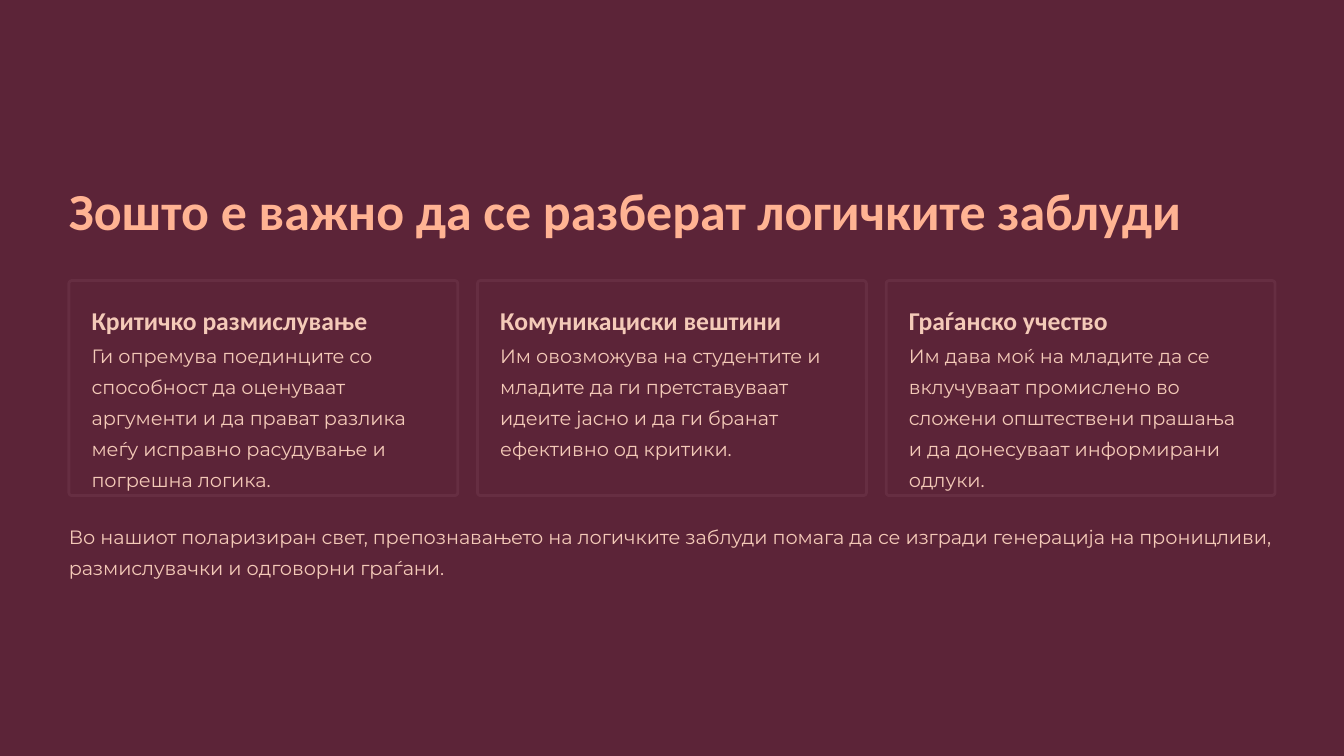
"""Build a slide on why understanding logical fallacies matters."""
from dataclasses import dataclass

from pptx import Presentation
from pptx.dml.color import RGBColor
from pptx.enum.shapes import MSO_SHAPE
from pptx.enum.text import MSO_ANCHOR, MSO_AUTO_SIZE, PP_ALIGN
from pptx.shapes.autoshape import Shape
from pptx.slide import Slide
from pptx.util import Inches, Pt

ROUNDED = MSO_SHAPE.ROUNDED_RECTANGLE
TOP = MSO_ANCHOR.TOP
NO_AUTOFIT = MSO_AUTO_SIZE.NONE
LEFT = PP_ALIGN.LEFT

PLUM = RGBColor(0x5C, 0x24, 0x38)
BORDER = RGBColor(0x66, 0x2E, 0x42)
PEACH = RGBColor(0xFF, 0xB3, 0x93)
BLUSH = RGBColor(0xF4, 0xCA, 0xB8)

HEADING_FONT = "Calibri"
BODY_FONT = "Montserrat"
MARGIN = 0.82
CONTENT_WIDTH = 14.36
CARD_TOP = 3.34
CARD_WIDTH = 4.63
CARD_HEIGHT = 2.56
CARD_PADDING = 0.27
CARD_TEXT_WIDTH = 4.05


@dataclass(frozen=True)
class Benefit:
    """Hold the wording of one card."""

    heading: str
    body: str


TITLE = "Зошто е важно да се разберат логичките заблуди"
BENEFITS = [
    Benefit(
        "Критичко размислување",
        "Ги опремува поединците со способност да оценуваат аргументи и да прават "
        "разлика меѓу исправно расудување и погрешна логика.",
    ),
    Benefit(
        "Комуникациски вештини",
        "Им овозможува на студентите и младите да ги претставуваат идеите јасно "
        "и да ги бранат ефективно од критики.",
    ),
    Benefit(
        "Граѓанско учество",
        "Им дава моќ на младите да се вклучуваат промислено во сложени општествени "
        "прашања и да донесуваат информирани одлуки.",
    ),
]
CARD_PITCH = (CONTENT_WIDTH - CARD_WIDTH) / (len(BENEFITS) - 1)
CONCLUSION = (
    "Во нашиот поларизиран свет, препознавањето на логичките заблуди помага да се "
    "изгради генерација на проницливи, размислувачки и одговорни граѓани."
)


def write_text(
    shape: Shape,
    text: str,
    *,
    font: str = BODY_FONT,
    size: float = 16.5,
    spacing: float = 26.5,
    color: RGBColor = BLUSH,
    bold: bool = False,
    wrap: bool = True,
) -> None:
    """Write one formatted paragraph into a shape without insets."""
    frame = shape.text_frame
    frame.margin_left = frame.margin_right = 0
    frame.margin_top = frame.margin_bottom = 0
    frame.auto_size = NO_AUTOFIT
    frame.vertical_anchor = TOP
    frame.word_wrap = wrap
    frame.text = text
    paragraph = frame.paragraphs[0]
    paragraph.alignment = LEFT
    paragraph.line_spacing = Pt(spacing)
    paragraph.space_before = Pt(0)
    paragraph.font.name = font
    paragraph.font.size = Pt(size)
    paragraph.font.bold = bold
    paragraph.font.color.rgb = color


def add_text_box(
    slide: Slide, left: float, top: float, width: float, height: float
) -> Shape:
    """Add an empty text box measured in inches."""
    return slide.shapes.add_textbox(
        Inches(left), Inches(top), Inches(width), Inches(height)
    )


def add_title(slide: Slide) -> None:
    """Place and format the title placeholder."""
    title = slide.shapes.title
    title.left, title.top = Inches(MARGIN), Inches(2.09)
    title.width, title.height = Inches(CONTENT_WIDTH), Inches(0.78)
    write_text(title, TITLE, font=HEADING_FONT, size=44.5, spacing=56,
               color=PEACH, bold=True)


def add_card(slide: Slide, benefit: Benefit, left: float) -> None:
    """Draw an outlined card with its heading and body."""
    card = slide.shapes.add_shape(
        ROUNDED, Inches(left), Inches(CARD_TOP), Inches(CARD_WIDTH), Inches(CARD_HEIGHT)
    )
    card.adjustments[0] = 0.014
    card.shadow.inherit = False
    card.fill.solid()
    card.fill.fore_color.rgb = PLUM
    card.line.color.rgb = BORDER
    card.line.width = Pt(2.4)

    text_left = left + CARD_PADDING
    heading = add_text_box(slide, text_left, 3.61, CARD_TEXT_WIDTH, 0.39)
    write_text(heading, benefit.heading, font=HEADING_FONT, size=22, spacing=28,
               bold=True, wrap=False)
    body = add_text_box(slide, text_left, 4.01, CARD_TEXT_WIDTH, 1.5)
    write_text(body, benefit.body)


def main() -> None:
    """Build and save the presentation."""
    presentation = Presentation()
    presentation.slide_width = Inches(16)
    presentation.slide_height = Inches(9)
    slide = presentation.slides.add_slide(presentation.slide_layouts[5])
    slide.background.fill.solid()
    slide.background.fill.fore_color.rgb = PLUM

    add_title(slide)
    for column, benefit in enumerate(BENEFITS):
        add_card(slide, benefit, MARGIN + column * CARD_PITCH)
    conclusion = add_text_box(slide, MARGIN, 6.16, CONTENT_WIDTH, 0.75)
    write_text(conclusion, CONCLUSION)
    presentation.save("out.pptx")


if __name__ == "__main__":
    main()
